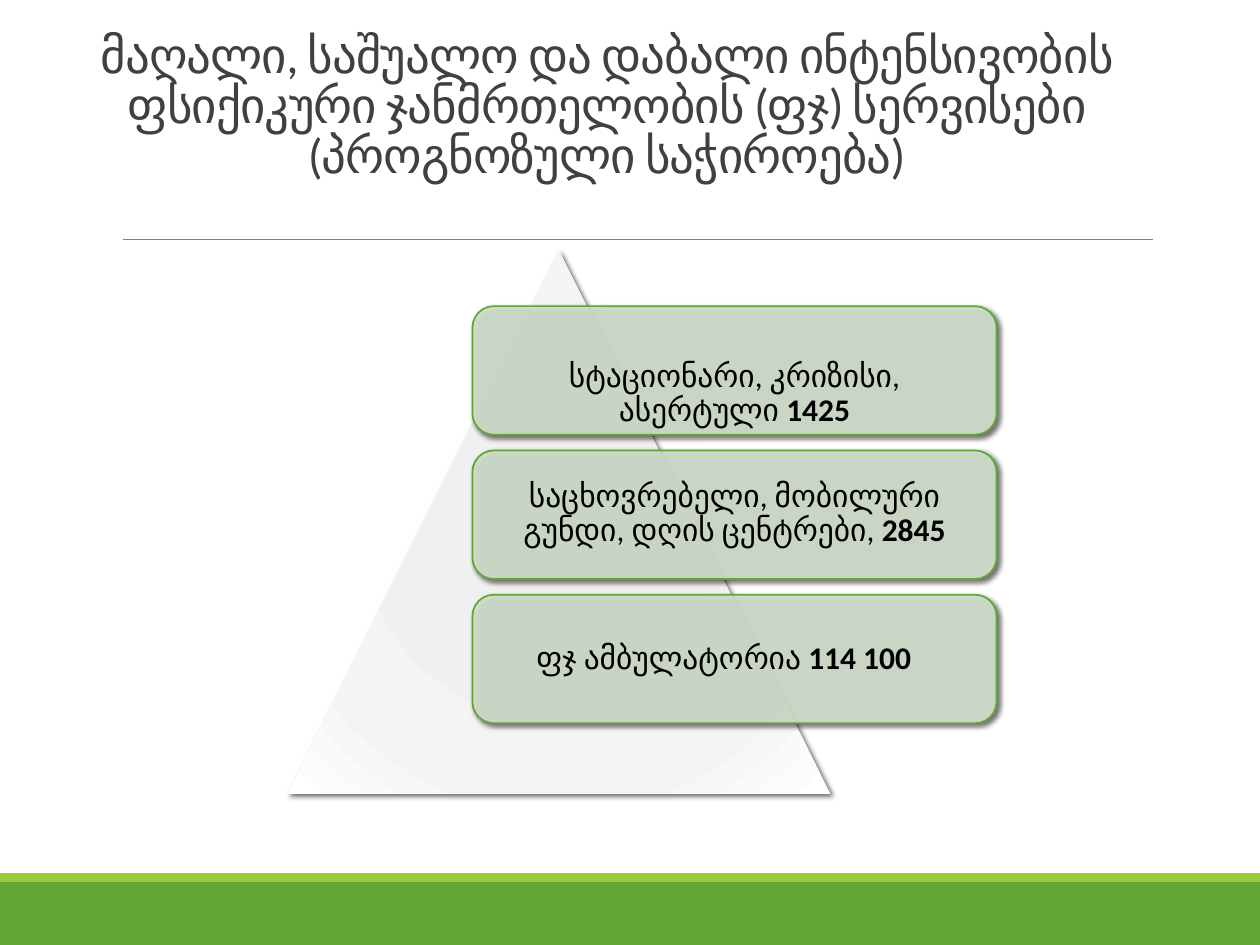
from dataclasses import dataclass

from lxml.etree import SubElement
from pptx import Presentation
from pptx.dml.color import RGBColor as Rgb
from pptx.enum.shapes import MSO_CONNECTOR as Link, MSO_SHAPE as Kind
from pptx.enum.text import MSO_ANCHOR as Anchor, PP_ALIGN as Align
from pptx.oxml import parse_xml
from pptx.oxml.ns import nsdecls, qn
from pptx.util import Inches, Pt

WIDE, HIGH = 10, 7.5
FONT = "Calibri"
HUES = {
    "green": "63A537", "lime": "99CB38", "rule": "808080",
    "title": "404040", "box": "D3E1CE", "text": "000000",
}
STOPS = {0: "EEEEEE", 34: "F0F0F0", 70: "F4F4F4", 100: "FFFFFF"}

# Column of level boxes: left, top, width, height and row step
LEFT, TOP, BOX_W, BOX_H, STEP = 3.75, 2.43, 4.16, 1.02, 1.145
PAD = 0.12


@dataclass
class Level:
    label: str
    count: str
    top: float = PAD
    right: float = PAD


TITLE = ("მაღალი, საშუალო და დაბალი ინტენსივობის ფსიქიკური "
         "ჯანმრთელობის (ფჯ) სერვისები (პროგნოზული საჭიროება)")
LEVELS = [
    Level("სტაციონარი, კრიზისი, ასერტული ", "1425", top=0.45),
    Level("საცხოვრებელი, მობილური გუნდი, დღის ცენტრები, ", "2845"),
    Level("ფჯ ამბულატორია ", "114 100", right=0.29),
]


def hue(name: str) -> Rgb:
    return Rgb.from_string(HUES[name])


def add_form(slide, kind, x: float, y: float, w: float, h: float):
    form = slide.shapes.add_shape(kind, *map(Inches, (x, y, w, h)))
    form.shadow.inherit = False
    form.line.fill.background()
    return form


def add_band(slide, y: float, h: float, name: str) -> None:
    band = add_form(slide, Kind.RECTANGLE, 0, y, WIDE, h)
    band.fill.solid()
    band.fill.fore_color.rgb = hue(name)


def cast_shadow(form) -> None:
    glow = form._element.spPr.find(qn("a:effectLst"))
    glow.append(parse_xml(
        f'<a:outerShdw {nsdecls("a")} blurRad="{Pt(3)}" dist="{Pt(2)}" '
        'dir="2700000" algn="tl" rotWithShape="0"><a:srgbClr val="000000">'
        '<a:alpha val="60000"/></a:srgbClr></a:outerShdw>'))


def fill_radial(form) -> None:
    form.fill.background()
    props = form._element.spPr
    stops = "".join(f'<a:gs pos="{at * 1000}"><a:srgbClr val="{tone}"/></a:gs>'
                    for at, tone in STOPS.items())
    full = " ".join(f'{side}="100000"' for side in "ltrb")
    props.replace(props.find(qn("a:noFill")), parse_xml(
        f'<a:gradFill {nsdecls("a")} rotWithShape="1"><a:gsLst>{stops}</a:gsLst>'
        f'<a:path path="circle"><a:fillToRect {full}/></a:path></a:gradFill>'))


def add_level(slide, row: int, level: Level) -> None:
    box = add_form(slide, Kind.ROUNDED_RECTANGLE,
                   LEFT, TOP + row * STEP, BOX_W, BOX_H)
    box.fill.solid()
    box.fill.fore_color.rgb = hue("box")
    tone = box._element.spPr.find(qn("a:solidFill"))[0]
    SubElement(tone, qn("a:alpha"), val="90000")
    box.line.color.rgb = hue("green")
    box.line.width = Pt(1)
    cast_shadow(box)

    frame = box.text_frame
    frame.word_wrap = True
    frame.vertical_anchor = Anchor.MIDDLE
    frame.margin_left = Inches(PAD)
    frame.margin_right = Inches(level.right)
    frame.margin_top = Inches(level.top)
    frame.margin_bottom = Inches(0.07 if level.top > PAD else PAD)
    para = frame.paragraphs[0]
    para.alignment = Align.CENTER
    para.line_spacing = 0.9
    para.font.name, para.font.size = FONT, Pt(18)
    para.font.color.rgb = hue("text")
    for words, bold in ((level.label, False), (level.count, True)):
        run = para.add_run()
        run.text = words
        run.font.bold = bold
        run.font.color.rgb = hue("text")


def add_rule(slide) -> None:
    rule = slide.shapes.add_connector(
        Link.STRAIGHT, *map(Inches, (0.98, 1.9, 9.15, 1.9)))
    rule.line.color.rgb = hue("rule")
    rule.line.width = Pt(0.5)
    SubElement(rule._element.spPr, qn("a:effectLst"))


def set_title(slide) -> None:
    title = slide.shapes.title
    title.left, title.top, title.width, title.height = map(
        Inches, (0.27, 0.42, 9.09, 1.09))
    frame = title.text_frame
    frame.text = TITLE
    frame.word_wrap = True
    frame.vertical_anchor = Anchor.BOTTOM
    para = frame.paragraphs[0]
    para.alignment = Align.CENTER
    para.line_spacing = 0.85
    para.font.name, para.font.size = FONT, Pt(28)
    para.font.color.rgb = hue("title")
    para.runs[0].font._element.set("spc", "-50")


def main() -> None:
    deck = Presentation()
    deck.slide_width, deck.slide_height = Inches(WIDE), Inches(HIGH)
    slide = deck.slides.add_slide(deck.slide_layouts[5])

    # Footer bands, title and rule
    add_band(slide, 7, 0.5, "green")
    add_band(slide, 6.93, 0.07, "lime")
    set_title(slide)
    add_rule(slide)

    # Pyramid with its levels
    peak = add_form(slide, Kind.ISOSCELES_TRIANGLE, 2.28, 1.99, 4.31, 4.31)
    fill_radial(peak)
    cast_shadow(peak)
    for row, level in enumerate(LEVELS):
        add_level(slide, row, level)

    deck.save("out.pptx")


if __name__ == "__main__":
    main()
